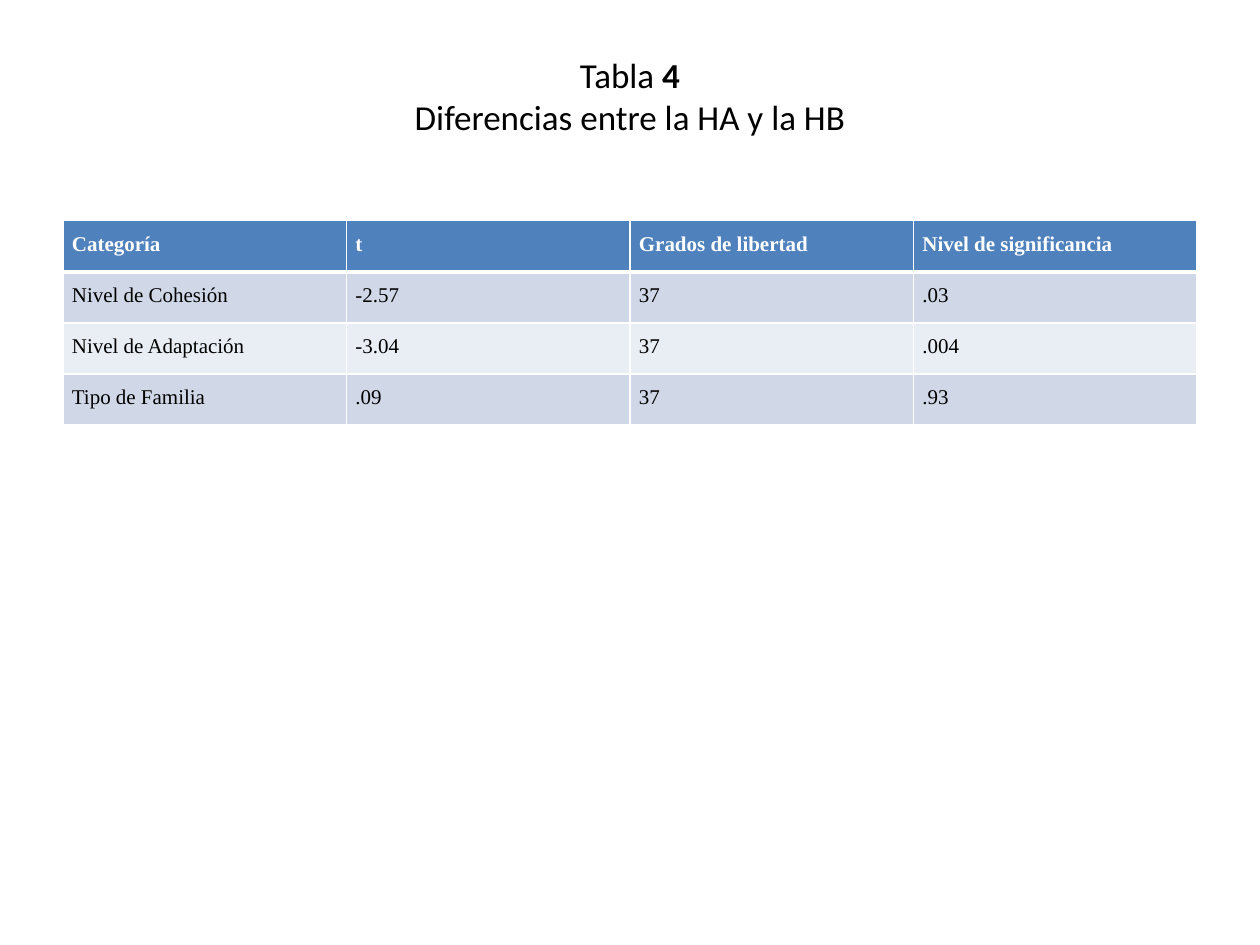
from pptx import Presentation
from pptx.dml.color import RGBColor
from pptx.enum.text import MSO_ANCHOR, PP_ALIGN
from pptx.oxml import parse_xml
from pptx.oxml.ns import nsdecls
from pptx.util import Cm, Pt

BLACK = RGBColor(0x00, 0x00, 0x00)
WHITE = RGBColor(0xFF, 0xFF, 0xFF)
HEADER_BLUE = RGBColor(0x4F, 0x81, 0xBD)
BAND_DARK = RGBColor(0xD0, 0xD8, 0xE8)
BAND_LIGHT = RGBColor(0xE9, 0xED, 0xF4)

ROWS = [
    ["Categoría", "t", "Grados de libertad", "Nivel de significancia"],
    ["Nivel de Cohesión", "-2.57", "37", ".03"],
    ["Nivel de Adaptación", "-3.04", "37", ".004"],
    ["Tipo de Familia", ".09", "37", ".93"],
]


def add_run(paragraph, text, font="Calibri", size=20, color=BLACK, bold=False):
    run = paragraph.add_run()
    run.text = text
    run.font.name = font
    run.font.size = Pt(size)
    run.font.color.rgb = color
    run.font.bold = bold


def add_border(cell, side, points):
    cell._tc.get_or_add_tcPr().append(parse_xml(
        f'<a:ln{side} {nsdecls("a")} w="{Pt(points)}"><a:solidFill>'
        f'<a:srgbClr val="{WHITE}"/></a:solidFill></a:ln{side}>'))


presentation = Presentation()
presentation.slide_width = Cm(25.4)
presentation.slide_height = Cm(19.05)
slide = presentation.slides.add_slide(presentation.slide_layouts[6])

# Title, raised from the middle of its box by a deeper bottom margin
title = slide.shapes.add_textbox(Cm(1.27), Cm(0.76), Cm(22.86), Cm(3.18))
frame = title.text_frame
frame.word_wrap = True
frame.vertical_anchor = MSO_ANCHOR.MIDDLE
frame.margin_bottom = Cm(0.99)
paragraph = frame.paragraphs[0]
paragraph.alignment = PP_ALIGN.CENTER
add_run(paragraph, "Tabla ")
add_run(paragraph, "4", bold=True)
paragraph.add_line_break()
add_run(paragraph, "Diferencias entre la HA y la HB")

# Table of differences
row_count, column_count = len(ROWS), len(ROWS[0])
table = slide.shapes.add_table(row_count, column_count, Cm(1.27), Cm(4.45),
                               Cm(22.86), Cm(1.03 * row_count)).table
for row_index, row in enumerate(ROWS):
    is_header = row_index == 0
    if is_header:
        fill_color = HEADER_BLUE
    else:
        fill_color = BAND_DARK if row_index % 2 else BAND_LIGHT
    for column_index, text in enumerate(row):
        cell = table.cell(row_index, column_index)
        cell.margin_left = cell.margin_right = Cm(0.18)
        cell.margin_top = cell.margin_bottom = 0

        # The line under the header is thicker
        add_border(cell, "L", 1)
        add_border(cell, "R", 1)
        add_border(cell, "T", 3 if row_index == 1 else 1)
        add_border(cell, "B", 3 if is_header else 1)
        cell.fill.solid()
        cell.fill.fore_color.rgb = fill_color

        paragraph = cell.text_frame.paragraphs[0]
        paragraph.line_spacing = 1.5
        add_run(paragraph, text, font="Times New Roman", size=12,
                color=WHITE if is_header else BLACK, bold=is_header)

presentation.save("out.pptx")
